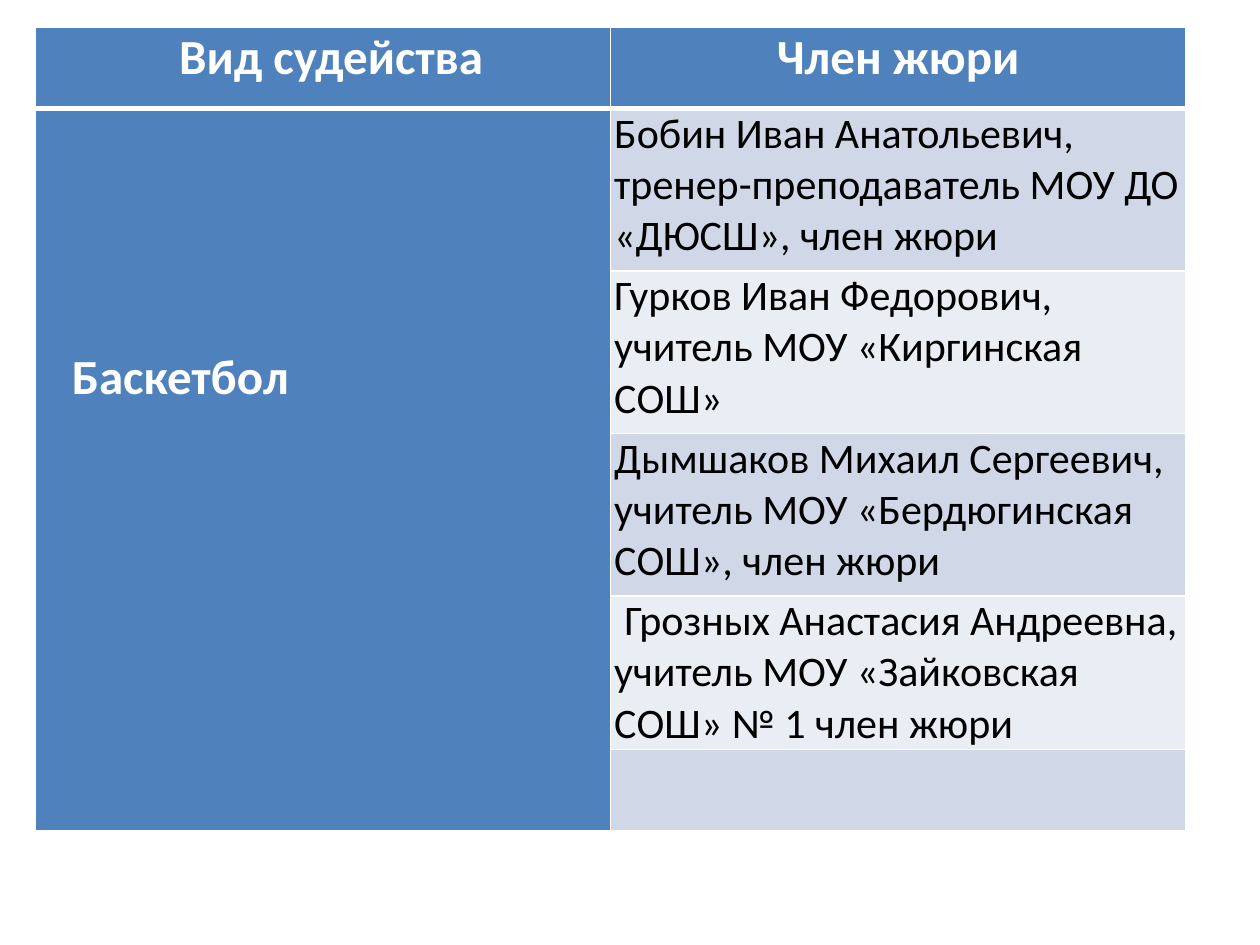
from pptx import Presentation
from pptx.dml.color import RGBColor
from pptx.enum.text import MSO_ANCHOR, PP_ALIGN
from pptx.oxml import parse_xml
from pptx.oxml.ns import nsdecls
from pptx.util import Inches, Pt

CENTER, LEFT = PP_ALIGN.CENTER, PP_ALIGN.LEFT
TOP = MSO_ANCHOR.TOP
FONT = "Calibri"
COLORS = {
    "header": "4F81BD",
    "band_dark": "D0D8E8",
    "band_light": "E9EDF4",
    "white": "FFFFFF",
    "black": "000000",
}
HEADINGS = ["Вид судейства", "Член жюри"]
SPORT = "Баскетбол"
JURY = [
    "Бобин Иван Анатольевич, тренер-преподаватель МОУ ДО «ДЮСШ», член жюри",
    "Гурков Иван Федорович, учитель МОУ «Киргинская СОШ»",
    "Дымшаков Михаил Сергеевич, учитель МОУ «Бердюгинская СОШ», член жюри",
    "Грозных Анастасия Андреевна, учитель МОУ «Зайковская СОШ» № 1 член жюри",
    "",
]
ROW_HEIGHTS = [0.64, 1.29, 1.29, 1.29, 1.21, 0.64]


def set_borders(cell, bottom=1):
    properties = cell._tc.get_or_add_tcPr()
    widths = {"lnL": 1, "lnR": 1, "lnT": 1, "lnB": bottom}
    for position, (side, width) in enumerate(widths.items()):
        line = parse_xml(
            f'<a:{side} {nsdecls("a")} w="{Pt(width)}"><a:solidFill>'
            f'<a:srgbClr val="{COLORS["white"]}"/></a:solidFill></a:{side}>'
        )
        properties.insert(position, line)


def style_cell(cell, fill, side_margin=0.03, top_margin=0, bottom_border=1):
    cell.fill.solid()
    cell.fill.fore_color.rgb = RGBColor.from_string(COLORS[fill])
    cell.margin_left = cell.margin_right = Inches(side_margin)
    cell.margin_top = Inches(top_margin)
    cell.margin_bottom = 0
    cell.vertical_anchor = TOP
    set_borders(cell, bottom_border)


def write_text(cell, text, size=28, color="white", bold=True, align=LEFT,
               left_indent=0, first_indent=0):
    paragraph = cell.text_frame.paragraphs[0]
    paragraph.alignment = align
    properties = paragraph._p.get_or_add_pPr()
    properties.set("marL", str(Inches(left_indent)))
    properties.set("indent", str(Inches(first_indent)))
    run = paragraph.add_run()
    run.text = text
    run.font.name = FONT
    run.font.size = Pt(size)
    run.font.bold = bold
    run.font.color.rgb = RGBColor.from_string(COLORS[color])


def add_jury_table(slide, left, top, width, height):
    table = slide.shapes.add_table(
        len(JURY) + 1, len(HEADINGS),
        Inches(left), Inches(top), Inches(width), Inches(height),
    ).table
    for row, row_height in zip(table.rows, ROW_HEIGHTS):
        row.height = Inches(row_height)

    for column, heading in enumerate(HEADINGS):
        first = column == 0
        cell = table.cell(0, column)
        style_cell(cell, "header", side_margin=0 if first else 0.03, bottom_border=3)
        write_text(cell, heading, align=CENTER, left_indent=0.13 if first else 0)

    sport_cell = table.cell(1, 0)
    sport_cell.merge(table.cell(len(JURY), 0))
    style_cell(sport_cell, "header", side_margin=0, top_margin=1.9)
    write_text(sport_cell, SPORT, left_indent=0.29)

    for row, member in enumerate(JURY, start=1):
        cell = table.cell(row, 1)
        style_cell(cell, "band_dark" if row % 2 else "band_light")
        if member:
            write_text(cell, member, size=24, color="black", bold=False,
                       first_indent=0.08 if row == 4 else 0)


def main():
    presentation = Presentation()
    presentation.slide_width = Inches(10)
    presentation.slide_height = Inches(7.5)
    slide = presentation.slides.add_slide(presentation.slide_layouts[6])
    add_jury_table(slide, left=0.28, top=0.22, width=9.13, height=sum(ROW_HEIGHTS))
    presentation.save("out.pptx")


if __name__ == "__main__":
    main()
